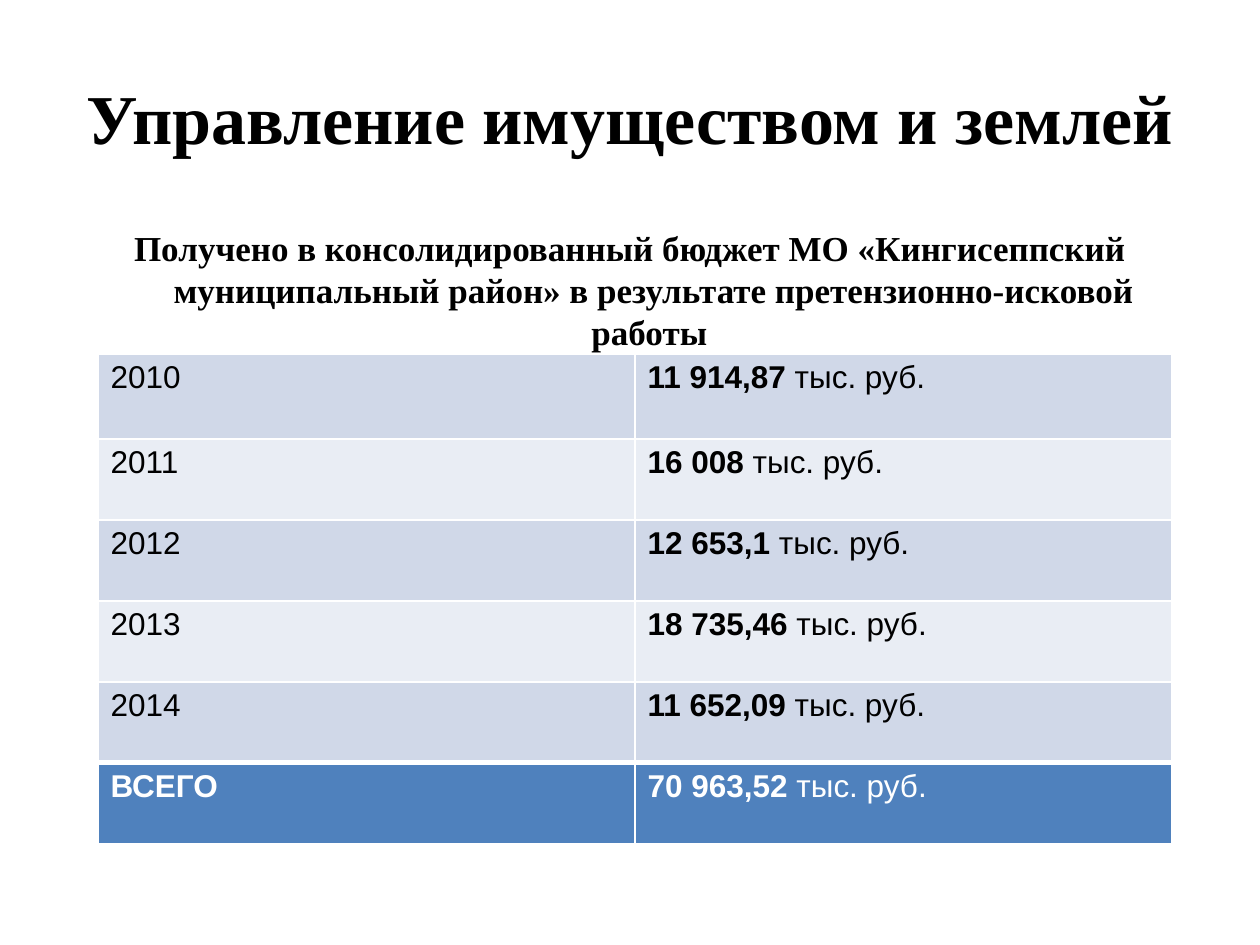
from dataclasses import dataclass

from lxml.etree import SubElement
from pptx import Presentation
from pptx.dml.color import RGBColor as RGB
from pptx.enum.text import MSO_ANCHOR as ANCHOR, MSO_AUTO_SIZE as FIT, PP_ALIGN as ALIGN
from pptx.oxml.ns import qn
from pptx.util import Emu, Pt


@dataclass(frozen=True)
class Theme:
    """Colours, fonts and type sizes of the slide."""
    ink: str = "000000"
    white: str = "FFFFFF"
    bands: tuple = ("D0D8E8", "E9EDF4")
    total: str = "4F81BD"
    serif: str = "Times New Roman"
    sans: str = "Arial"
    title: int = 40
    lead: int = 20
    cell: int = 18


T = Theme()
TITLE = "Управление имуществом и землей"
LEAD = ("Получено в консолидированный бюджет МО «Кингисеппский муниципальный "
        "район» в результате претензионно-исковой работы ")
UNIT = "тыс. руб."
INCOME = [
    ("2010", "11 914,87"),
    ("2011", "16 008"),
    ("2012", "12 653,1"),
    ("2013", "18 735,46"),
    ("2014", "11 652,09"),
    ("ВСЕГО", "70 963,52"),
]


def px(n):
    """Turn pixels, 126 to the inch, into EMU."""
    return Emu(round(n * 914400 / 126))


def style(font, name, size, color, bold=None):
    """Set the look of a font."""
    font.name, font.size, font.bold = name, Pt(size), bold
    font.color.rgb = RGB.from_string(color)


def fill_placeholder(sp, box, text, size):
    """Place a placeholder in the box with one bold centred paragraph."""
    sp.left, sp.top, sp.width, sp.height = map(px, box)
    tf = sp.text_frame
    tf.text, tf.auto_size = text, FIT.NONE
    p = tf.paragraphs[0]
    p.alignment, p.space_before = ALIGN.CENTER, Pt(0)
    SubElement(p._p.get_or_add_pPr(), qn("a:buNone"))
    style(p.font, T.serif, size, T.ink, True)


def set_borders(cell, top):
    """Draw white cell borders, with the top one at its own weight."""
    tcPr = cell._tc.get_or_add_tcPr()
    for side, weight in (("L", 1), ("R", 1), ("T", top), ("B", 1)):
        ln = SubElement(tcPr, qn(f"a:ln{side}"), w=str(Pt(weight)))
        SubElement(SubElement(ln, qn("a:solidFill")), qn("a:srgbClr"), val=T.white)


def write_cell(cell, runs, fill, color, top):
    """Fill a cell with runs given as pairs of text and boldness."""
    set_borders(cell, top)
    cell.fill.solid()
    cell.fill.fore_color.rgb = RGB.from_string(fill)
    p = cell.text_frame.paragraphs[0]
    for text, bold in runs:
        r = p.add_run()
        r.text = text
        style(r.font, T.sans, T.cell, color, bold)


def add_income_table(s, box, first_height, row_height):
    """Add the banded table of yearly income, closed by the total."""
    table = s.shapes.add_table(len(INCOME), 2, *map(px, box)).table
    table.first_row = table.horz_banding = False
    for col in table.columns:
        col.width = px(box[2] // 2)
    for i, (label, amount) in enumerate(INCOME):
        last = i == len(INCOME) - 1
        table.rows[i].height = px(row_height if i else first_height)
        look = (T.total, T.white, 3) if last else (T.bands[i % 2], T.ink, 1)
        write_cell(table.cell(i, 0), [(label, last)], *look)
        write_cell(table.cell(i, 1), [(amount + " ", True), (UNIT, False)], *look)


def main():
    """Build the slide and save it."""
    prs = Presentation()
    prs.slide_width, prs.slide_height = px(1260), px(945)
    s = prs.slides.add_slide(prs.slide_layouts[1])
    fill_placeholder(s.shapes.title, (63, 38, 1134, 157), TITLE, T.title)
    s.shapes.title.text_frame.vertical_anchor = ANCHOR.MIDDLE
    fill_placeholder(s.placeholders[1], (63, 220, 1134, 624), LEAD, T.lead)
    add_income_table(s, (98, 354, 1074, 490), 85, 81)
    prs.save("out.pptx")


if __name__ == "__main__":
    main()
